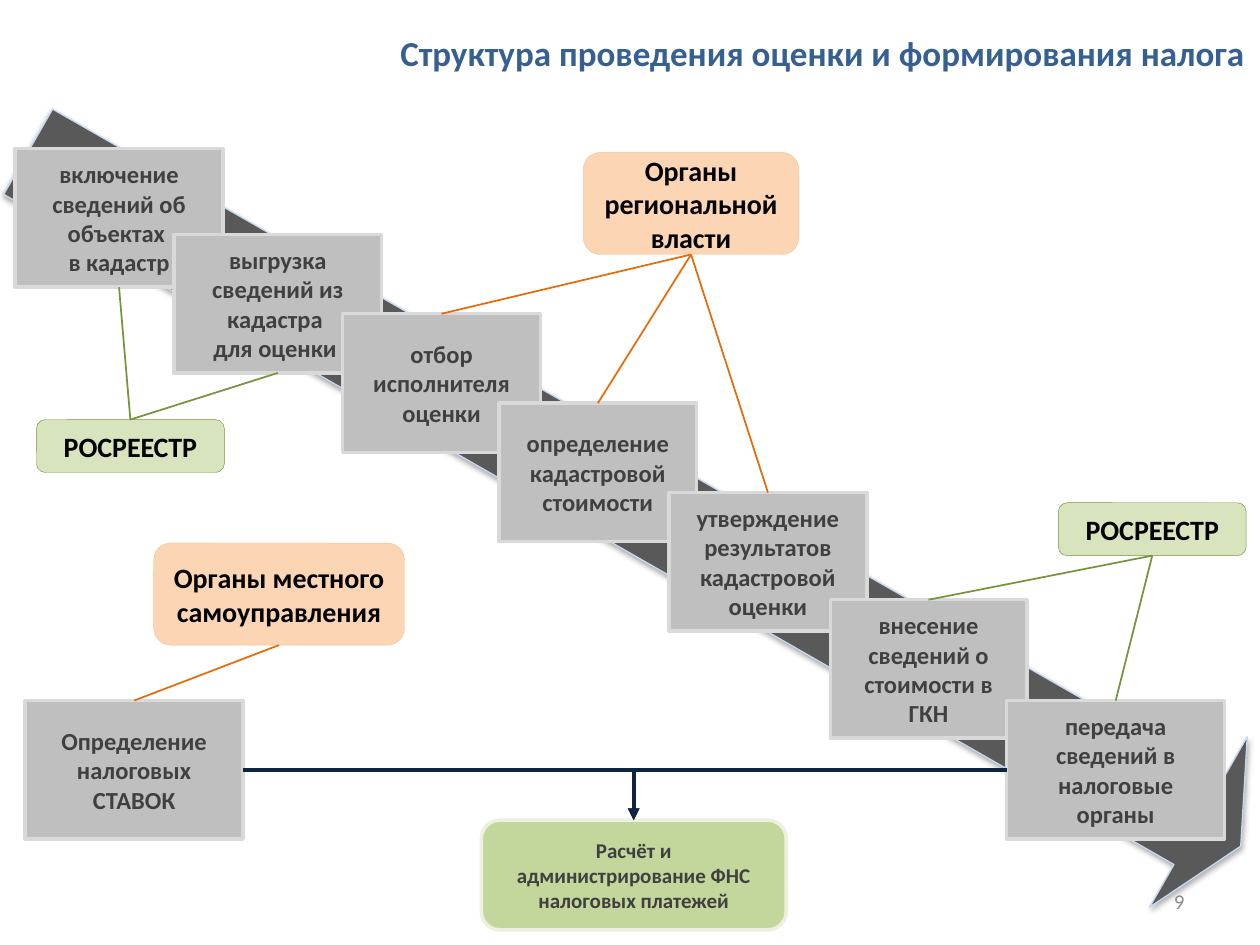
from dataclasses import dataclass

from lxml.etree import SubElement
from pptx import Presentation
from pptx.dml.color import RGBColor
from pptx.enum.shapes import MSO_CONNECTOR, MSO_SHAPE
from pptx.enum.text import MSO_ANCHOR, PP_ALIGN
from pptx.oxml.ns import qn
from pptx.util import Inches, Pt

TOP, BOTTOM, RIGHT, LEFT = 0, 2, 3, 1


@dataclass(frozen=True)
class Theme:
    """Colours and type sizes of the slide."""
    font: str = "Calibri"
    title: str = "376092"
    arrow: str = "595959"
    arrow_line: str = "C6D9F1"
    flow: str = "0F243E"
    green: str = "77933C"
    orange: str = "E46C0A"
    number: str = "8C8C8C"
    title_size: float = 20
    number_size: float = 12


@dataclass(frozen=True)
class Style:
    """Look of one kind of box."""
    shape: MSO_SHAPE
    fill: str
    line: str
    width: float
    text: str
    size: float


@dataclass(frozen=True)
class Box:
    """A labelled box, placed in inches."""
    key: str
    style: Style
    at: tuple[float, float, float, float]
    text: str


@dataclass(frozen=True)
class Link:
    """A line between connection sites of two boxes."""
    start: str
    start_site: int
    end: str
    end_site: int
    color: str


T = Theme()
STEP = Style(MSO_SHAPE.RECTANGLE, "BFBFBF", "D9D9D9", 2, "404040", 14)
RESULT = Style(MSO_SHAPE.ROUNDED_RECTANGLE, "C3D69B", "EBF1DE", 2, "404040", 12)
REGISTRY = Style(MSO_SHAPE.ROUNDED_RECTANGLE, "D7E4BD", T.green, 0.25, "000000", 16)
AUTHORITY = Style(MSO_SHAPE.ROUNDED_RECTANGLE, "FCD5B5", "FAC090", 0.25, "000000", 16)

BOXES = [
    Box("include", STEP, (0.12, 1.18, 1.65, 1.1), "включение сведений об объектах \nв кадастр"),
    Box("export", STEP, (1.38, 1.86, 1.65, 1.1), "выгрузка сведений из кадастра \nдля оценки "),
    Box("select", STEP, (2.72, 2.49, 1.57, 1.1), "отбор исполнителя оценки"),
    Box("value", STEP, (3.96, 3.2, 1.57, 1.1), "определение кадастровой стоимости"),
    Box("approve", STEP, (5.31, 3.91, 1.57, 1.1), "утверждение результатов кадастровой оценки"),
    Box("enter", STEP, (6.59, 4.76, 1.56, 1.1), "внесение сведений о стоимости в ГКН"),
    Box("transfer", STEP, (7.99, 5.56, 1.73, 1.1), "передача сведений в налоговые органы"),
    Box("rates", STEP, (0.2, 5.56, 1.73, 1.1), "Определение налоговых СТАВОК"),
    Box("payment", RESULT, (3.82, 6.51, 2.42, 0.87), "Расчёт и администрирование ФНС налоговых платежей"),
    Box("registry_in", REGISTRY, (0.29, 3.33, 1.49, 0.42), "РОСРЕЕСТР"),
    Box("registry_out", REGISTRY, (8.4, 3.99, 1.49, 0.42), "РОСРЕЕСТР"),
    Box("region", AUTHORITY, (4.63, 1.21, 1.71, 0.81), "Органы региональной власти"),
    Box("local", AUTHORITY, (1.22, 4.31, 1.99, 0.81), "Органы местного самоуправления"),
]

LINKS = [
    Link("registry_in", TOP, "include", BOTTOM, T.green),
    Link("registry_in", TOP, "export", BOTTOM, T.green),
    Link("enter", TOP, "registry_out", BOTTOM, T.green),
    Link("transfer", TOP, "registry_out", BOTTOM, T.green),
    *(Link(k, TOP, "region", BOTTOM, T.orange) for k in ("select", "value", "approve")),
    Link("rates", TOP, "local", BOTTOM, T.orange),
]

FLOWS = [
    Link("rates", RIGHT, "payment", TOP, T.flow),
    Link("transfer", LEFT, "payment", TOP, T.flow),
]


def set_text(tf, text: str, align: PP_ALIGN, size: float, color: str, bold: bool = True) -> None:
    """Fill a text frame with evenly formatted paragraphs."""
    tf.text = text
    tf.word_wrap = True
    tf.vertical_anchor = MSO_ANCHOR.MIDDLE
    for p in tf.paragraphs:
        p.alignment = align
        for r in p.runs:
            for name, value in {"name": T.font, "size": Pt(size), "bold": bold}.items():
                setattr(r.font, name, value)
            r.font.color.rgb = RGBColor.from_string(color)


def set_line(line, color: str, width: float) -> None:
    """Give an outline its colour and width."""
    line.color.rgb = RGBColor.from_string(color)
    line.width = Pt(width)


def add_shape(s, kind: MSO_SHAPE, at: tuple, fill: str, line: str, width: float):
    """Add a filled preset shape without a shadow."""
    sp = s.shapes.add_shape(kind, *map(Inches, at))
    sp.shadow.inherit = False
    sp.fill.solid()
    sp.fill.fore_color.rgb = RGBColor.from_string(fill)
    set_line(sp.line, line, width)
    return sp


def add_box(s, box: Box):
    """Add a labelled box."""
    st = box.style
    sp = add_shape(s, st.shape, box.at, st.fill, st.line, st.width)
    set_text(sp.text_frame, box.text, PP_ALIGN.CENTER, st.size, st.text)
    return sp


def add_link(s, shapes: dict, link: Link, kind=MSO_CONNECTOR.STRAIGHT, width: float = 1):
    """Join two boxes with a connector."""
    cxn = s.shapes.add_connector(kind, 0, 0, 0, 0)
    cxn.begin_connect(shapes[link.start], link.start_site)
    cxn.end_connect(shapes[link.end], link.end_site)
    set_line(cxn.line, link.color, width)
    SubElement(cxn._element.spPr, qn("a:effectLst"))
    return cxn


def add_flow(s, shapes: dict, link: Link) -> None:
    """Join two boxes with a one-bend arrow."""
    cxn = add_link(s, shapes, link, MSO_CONNECTOR.ELBOW, 2.25)
    cxn._element.spPr.find(qn("a:prstGeom")).set("prst", "bentConnector2")
    SubElement(cxn.line._get_or_add_ln(), qn("a:tailEnd"), type="triangle")


def add_process_arrow(s) -> None:
    """Add the slanted arrow with its soft shadow."""
    sp = add_shape(s, MSO_SHAPE.RIGHT_ARROW, (-0.51, 3.18, 11.09, 1.56), T.arrow, T.arrow_line, 0.75)
    sp.rotation = 29.8
    sp.adjustments[1] = 0.248
    effects = sp._element.spPr.find(qn("a:effectLst"))
    shadow = SubElement(effects, qn("a:outerShdw"), blurRad=str(Pt(3.1)), dist=str(Pt(1.8)),
                        dir="5400000", rotWithShape="0")
    color = SubElement(shadow, qn("a:srgbClr"), val="000000")
    SubElement(color, qn("a:alpha"), val="35000")


def main() -> None:
    """Build and save the slide."""
    prs = Presentation()
    prs.slide_width, prs.slide_height = Inches(10), Inches(7.5)
    s = prs.slides.add_slide(prs.slide_layouts[5])

    title = s.shapes.title
    place = {"left": 2.09, "top": 0, "width": 7.89, "height": 0.84}
    for name, value in place.items():
        setattr(title, name, Inches(value))
    set_text(title.text_frame, "Структура проведения оценки и формирования налога",
             PP_ALIGN.RIGHT, T.title_size, T.title)

    add_process_arrow(s)
    shapes = {box.key: add_box(s, box) for box in BOXES}
    for link in FLOWS:
        add_flow(s, shapes, link)
    for link in LINKS:
        add_link(s, shapes, link)

    number = s.shapes.add_textbox(*map(Inches, (7.17, 6.95, 2.33, 0.4)))
    set_text(number.text_frame, "9", PP_ALIGN.RIGHT, T.number_size, T.number, bold=False)
    prs.save("out.pptx")


if __name__ == "__main__":
    main()
